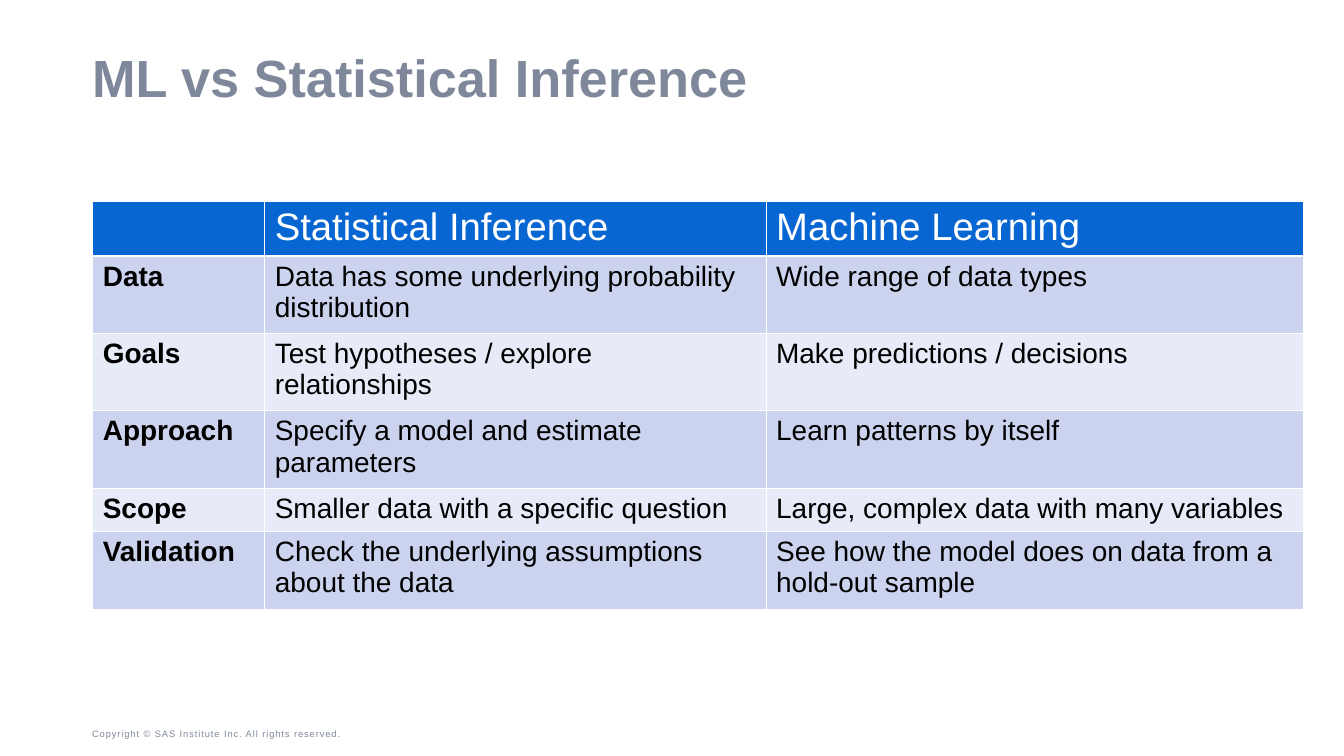
from lxml import etree
from pptx import Presentation
from pptx import util as u
from pptx.dml.color import RGBColor
from pptx.enum import text
from pptx.oxml.ns import qn

# Content
TITLE = "ML vs Statistical Inference"
COPYRIGHT = "Copyright © SAS Institute Inc. All rights reserved."
ROWS = [
    ("", "Statistical Inference", "Machine Learning"),
    ("Data", "Data has some underlying probability distribution", "Wide range of data types"),
    ("Goals", "Test hypotheses / explore relationships", "Make predictions / decisions"),
    ("Approach", "Specify a model and estimate parameters", "Learn patterns by itself"),
    ("Scope", "Smaller data with a specific question", "Large, complex data with many variables"),
    ("Validation", "Check the underlying assumptions about the data",
     "See how the model does on data from a hold-out sample"),
]

# Layout and style
WIDTH, HEIGHT = 20, 11.25
LEFT = 1.37
TABLE_TOP = 2.99
COLUMN_WIDTHS = [2.56, 7.46, 8]
HEADER_HEIGHT, ONE_LINE, TWO_LINES = 0.82, 0.65, 1.15
ROW_HEIGHTS = [HEADER_HEIGHT] + [TWO_LINES] * 3 + [ONE_LINE, TWO_LINES]
FONT = "Arial"
GREY, WHITE, BLACK, BLUE = "7E889A", "FFFFFF", "000000", "0766D1"
BANDS = ["E7EAF7", "CCD3EE"]


def rgb(value):
    return RGBColor.from_string(value)


def style(para, size, color, bold=False):
    font = para.font
    font.name, font.size, font.bold = FONT, u.Pt(size), bold
    font.color.rgb = rgb(color)


def add_text(page, words, place, size, anchor, insets, bold=False):
    box = page.shapes.add_textbox(*(u.Inches(n) for n in place))
    frame = box.text_frame
    frame.word_wrap = True
    frame.vertical_anchor = anchor
    (frame.margin_left, frame.margin_top,
     frame.margin_right, frame.margin_bottom) = (u.Inches(n) for n in insets)
    para = frame.paragraphs[0]
    para.text = words
    style(para, size, GREY, bold)
    return para


def set_borders(cell, bottom):
    properties = cell._tc.get_or_add_tcPr()
    widths = {"a:lnL": 1, "a:lnR": 1, "a:lnT": 1, "a:lnB": bottom}
    for place, (side, points) in enumerate(widths.items()):
        line = etree.Element(qn(side), w=str(u.Pt(points)))
        fill = etree.SubElement(line, qn("a:solidFill"))
        etree.SubElement(fill, qn("a:srgbClr"), val=WHITE)
        properties.insert(place, line)


def add_comparison(page):
    table = page.shapes.add_table(
        len(ROWS), len(COLUMN_WIDTHS), u.Inches(LEFT + 0.01), u.Inches(TABLE_TOP),
        u.Inches(sum(COLUMN_WIDTHS)), u.Inches(sum(ROW_HEIGHTS))).table
    for column, width in zip(table.columns, COLUMN_WIDTHS):
        column.width = u.Inches(width)
    for i, (row, height) in enumerate(zip(table.rows, ROW_HEIGHTS)):
        row.height = u.Inches(height)
        header = i == 0
        for j, (cell, words) in enumerate(zip(row.cells, ROWS[i])):
            cell.margin_left = cell.margin_right = u.Inches(0.15)
            cell.margin_top = cell.margin_bottom = u.Inches(0.07)
            cell.fill.solid()
            cell.fill.fore_color.rgb = rgb(BLUE if header else BANDS[i % 2])
            set_borders(cell, 3 if i == 0 else 1)
            para = cell.text_frame.paragraphs[0]
            para.text = words
            style(para, 41 if header else 30, WHITE if header else BLACK,
                  bold=j == 0 and not header)


def main():
    deck = Presentation()
    deck.slide_width, deck.slide_height = u.Inches(WIDTH), u.Inches(HEIGHT)
    page = deck.slides.add_slide(deck.slide_layouts[6])

    # Footer with letter spacing
    footer = add_text(page, COPYRIGHT, (LEFT, 10.78, 5.5, 0.27), 10,
                      text.MSO_ANCHOR.BOTTOM, (0, 0.05, 0.1, 0.05))
    footer.runs[0].font._element.set("spc", "100")

    # Title
    title = add_text(page, TITLE, (LEFT, 0.78, 17.25, 0.85), 56,
                     text.MSO_ANCHOR.MIDDLE, (0, 0, 0, 0), bold=True)
    title.line_spacing = 0.9

    # Comparison table
    add_comparison(page)
    deck.save("out.pptx")


if __name__ == "__main__":
    main()
